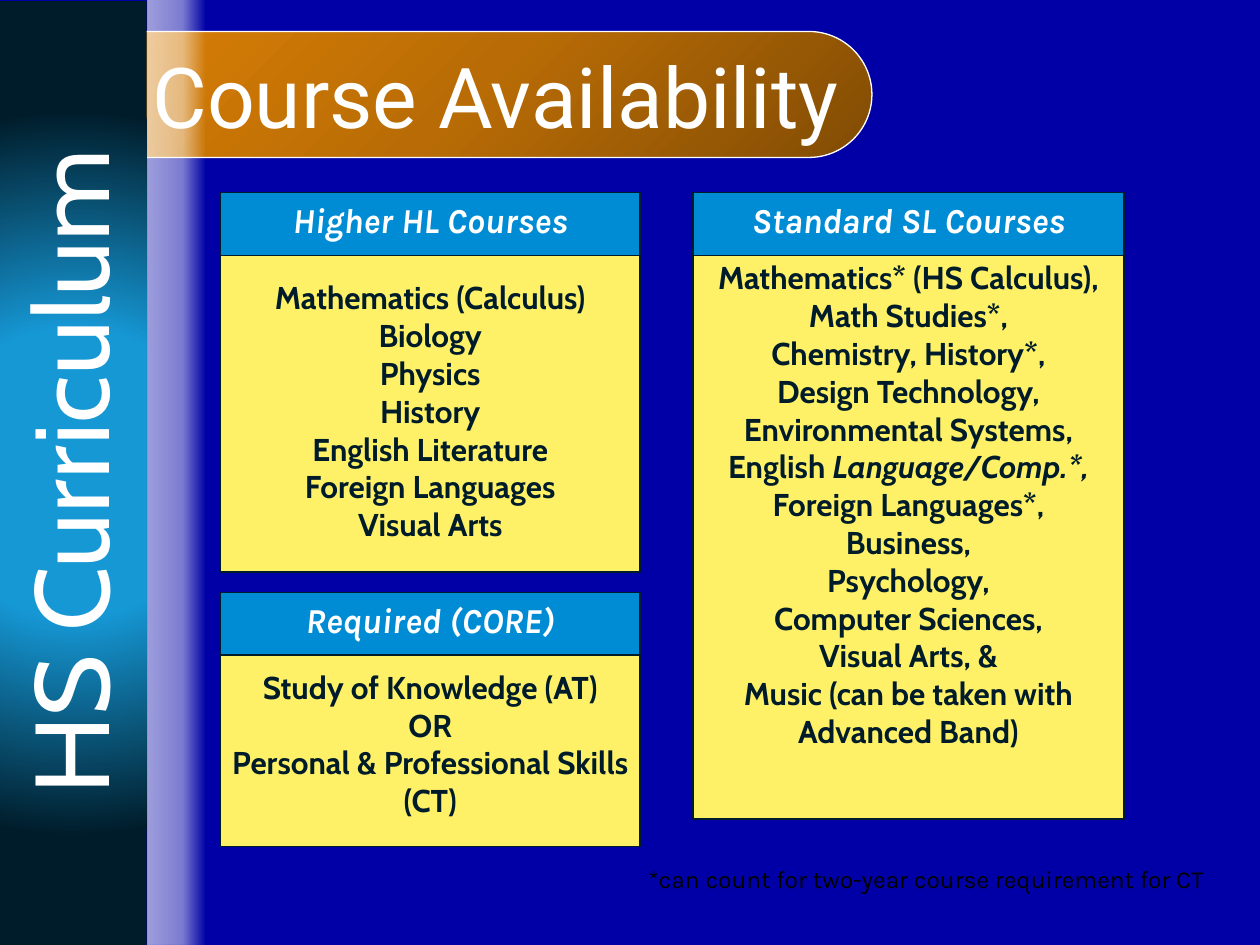
from dataclasses import dataclass
from typing import NamedTuple, Optional

from lxml import etree
from pptx import Presentation
from pptx.dml.color import RGBColor
from pptx.enum.shapes import MSO_SHAPE
from pptx.enum.text import MSO_ANCHOR, PP_ALIGN
from pptx.oxml.ns import qn
from pptx.util import Inches, Pt

RECTANGLE = MSO_SHAPE.RECTANGLE
ROUNDED = MSO_SHAPE.ROUNDED_RECTANGLE
LEFT, CENTER = PP_ALIGN.LEFT, PP_ALIGN.CENTER
TOP = MSO_ANCHOR.TOP


@dataclass(frozen=True)
class Theme:
    background: str = "0000A6"
    ink: str = "001C2A"
    white: str = "FFFFFF"
    black: str = "000000"
    header: str = "008CD4"
    panel: str = "FFF167"
    sidebar: str = "1698D5"
    pill: tuple = ("824C04", "B96C05", "DC8006")
    body_font: str = "Cabin"
    header_font: str = "Karla"
    title_font: str = "Roboto"
    sidebar_size: int = 60
    title_size: int = 48
    header_size: int = 20
    body_size: int = 18
    note_size: int = 14
    border: float = 0.75


THEME = Theme()


class Box(NamedTuple):
    left: float
    top: float
    width: float
    height: float


class Style(NamedTuple):
    font: str
    size: int
    color: str
    bold: bool = False
    italic: bool = False


class Stop(NamedTuple):
    position: int
    color: str
    opacity: int = 100


@dataclass(frozen=True)
class CoursePanel:
    heading: str
    courses: tuple
    left: float
    header_top: float
    width: float
    body_top: float
    body_height: float


BODY = Style(THEME.body_font, THEME.body_size, THEME.ink, bold=True)
BODY_ITALIC = BODY._replace(italic=True)
HEADER = Style(THEME.header_font, THEME.header_size, THEME.white, True, True)
TITLE = Style(THEME.title_font, THEME.title_size, THEME.white)
SIDEBAR = Style(THEME.body_font, THEME.sidebar_size, THEME.white)
NOTE = Style(THEME.header_font, THEME.note_size, THEME.black)

HEADER_HEIGHT = 0.5
# A course is plain text or a pair of plain and italic text.
PANELS = (
    CoursePanel("Higher HL Courses", (
        "Mathematics (Calculus)", "Biology", "Physics", "History",
        "English Literature", "Foreign Languages", "Visual Arts",
    ), 1.75, 1.53, 3.33, 1.78, 2.76),
    CoursePanel("Standard SL Courses", (
        "Mathematics* (HS Calculus),", "Math Studies*,", "Chemistry, History*,",
        "Design Technology,", "Environmental Systems,",
        ("English ", "Language/Comp.*,"), "Foreign Languages*,", "Business,",
        "Psychology,", "Computer Sciences,", "Visual Arts, &",
        "Music (can be taken with Advanced Band)",
    ), 5.5, 1.53, 3.42, 1.62, 4.88),
    CoursePanel("Required (CORE)", (
        "Study of Knowledge (AT)", "OR", "Personal & Professional Skills (CT)",
    ), 1.75, 4.7, 3.33, 4.87, 1.85),
)


def inches(box: Box) -> list:
    return [Inches(value) for value in box]


def add_run(paragraph, text: str, style: Style) -> None:
    run = paragraph.add_run()
    run.text = text
    font = run.font
    font.name, font.size = style.font, Pt(style.size)
    font.bold, font.italic = style.bold, style.italic
    font.color.rgb = RGBColor.from_string(style.color)


def write_lines(shape, lines, alignment) -> None:
    """Write one paragraph per line; a line is a list of (text, style) runs."""
    frame = shape.text_frame
    frame.word_wrap = True
    frame.vertical_anchor = TOP
    for index, line in enumerate(lines):
        paragraph = frame.add_paragraph() if index else frame.paragraphs[0]
        paragraph.alignment = alignment
        for text, style in line:
            add_run(paragraph, text, style)


def add_block(slide, kind, box: Box, fill: Optional[str] = None,
              line: Optional[str] = None):
    shape = slide.shapes.add_shape(kind, *inches(box))
    shape.shadow.inherit = False
    if fill:
        shape.fill.solid()
        shape.fill.fore_color.rgb = RGBColor.from_string(fill)
    else:
        shape.fill.background()
    if line:
        shape.line.color.rgb = RGBColor.from_string(line)
        shape.line.width = Pt(THEME.border)
    else:
        shape.line.fill.background()
    return shape


def set_gradient(shape, stops, angle: Optional[int] = None) -> None:
    """Replace an empty fill by a linear gradient, or a circular one without angle."""
    gradient = etree.Element(qn("a:gradFill"), rotWithShape="1")
    stop_list = etree.SubElement(gradient, qn("a:gsLst"))
    for stop in stops:
        entry = etree.SubElement(stop_list, qn("a:gs"), pos=str(stop.position * 1000))
        color = etree.SubElement(entry, qn("a:srgbClr"), val=stop.color)
        if stop.opacity < 100:
            etree.SubElement(color, qn("a:alpha"), val=str(stop.opacity * 1000))
    if angle is None:
        circle = etree.SubElement(gradient, qn("a:path"), path="circle")
        etree.SubElement(circle, qn("a:fillToRect"),
                         **{side: "50000" for side in "ltrb"})
    else:
        etree.SubElement(gradient, qn("a:lin"), ang=str(angle * 60000), scaled="0")
    properties = shape.element.spPr
    properties.replace(properties.find(qn("a:noFill")), gradient)


def add_text(slide, box: Box, text: str, style: Style, alignment=LEFT):
    shape = slide.shapes.add_textbox(*inches(box))
    write_lines(shape, [[(text, style)]], alignment)
    return shape


def add_course_panel(slide, panel: CoursePanel) -> None:
    body = add_block(slide, RECTANGLE, Box(panel.left, panel.body_top, panel.width,
                                           panel.body_height), THEME.panel, THEME.ink)
    frame = body.text_frame
    frame.margin_left = frame.margin_right = Inches(0.07)
    frame.margin_top, frame.margin_bottom = Inches(0.43), Inches(0.1)
    lines = [[(course, BODY)] if isinstance(course, str)
             else list(zip(course, (BODY, BODY_ITALIC))) for course in panel.courses]
    write_lines(body, lines, CENTER)
    header = add_block(slide, RECTANGLE, Box(panel.left, panel.header_top, panel.width,
                                             HEADER_HEIGHT), THEME.header, THEME.ink)
    write_lines(header, [[(panel.heading, HEADER)]], CENTER)


def add_title(slide) -> None:
    title = slide.shapes.title
    title.left, title.top, title.width, title.height = inches(Box(1.11, 0.3, 5.83, 0.91))
    write_lines(title, [[("Course Availability", TITLE)]], LEFT)
    # Bring the title in front of the pill.
    title.element.getparent().append(title.element)


def add_decoration(slide) -> None:
    pill = add_block(slide, ROUNDED, Box(0.5, 0.25, 6.42, 1), line=THEME.white)
    pill.adjustments[0] = 0.5
    set_gradient(pill, map(Stop, (0, 50, 100), THEME.pill), 225)
    sidebar = add_block(slide, RECTANGLE, Box(-3.17, 3.17, 7.5, 1.17))
    sidebar.rotation = 270
    set_gradient(sidebar, (Stop(30, THEME.sidebar), Stop(76, THEME.ink),
                           Stop(100, THEME.ink)))
    glow = add_block(slide, RECTANGLE, Box(1.17, 0, 0.46, 7.5))
    set_gradient(glow, (Stop(0, THEME.white, 62), Stop(60, THEME.white, 48),
                        Stop(100, THEME.white, 0)), 0)


def main() -> None:
    presentation = Presentation()
    presentation.slide_width, presentation.slide_height = Inches(10), Inches(7.5)
    slide = presentation.slides.add_slide(presentation.slide_layouts[5])
    slide.background.fill.solid()
    slide.background.fill.fore_color.rgb = RGBColor.from_string(THEME.background)

    add_decoration(slide)
    label = add_text(slide, Box(-3.21, 3.19, 7.5, 1.11), "HS Curriculum", SIDEBAR, CENTER)
    label.rotation = 270
    add_title(slide)
    for panel in PANELS:
        add_course_panel(slide, panel)
    add_text(slide, Box(5.05, 6.81, 4.67, 0.34),
             "*can count for two-year course requirement for CT", NOTE)
    presentation.save("out.pptx")


if __name__ == "__main__":
    main()
